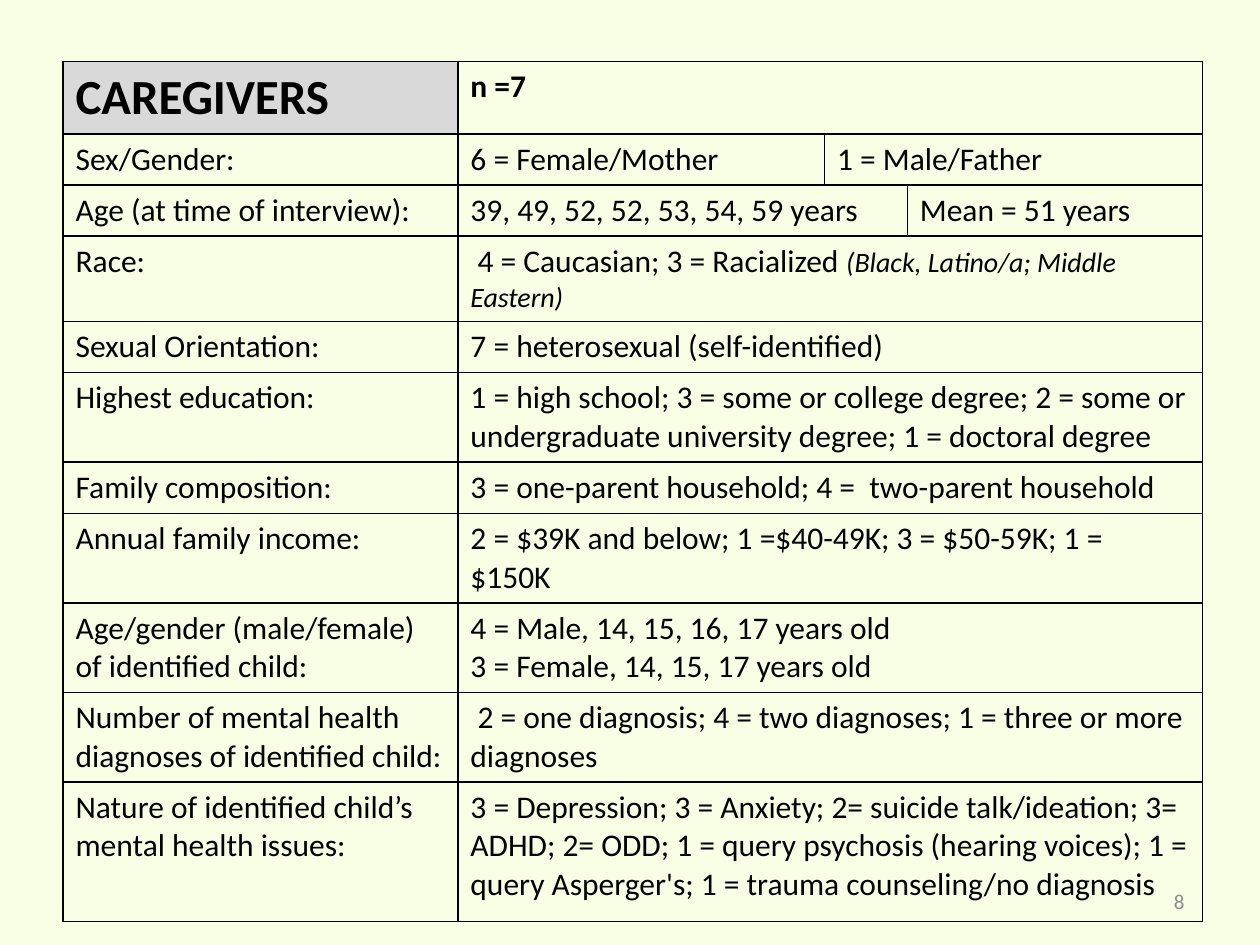
"""Build a slide with a table describing the seven caregivers interviewed."""
from dataclasses import dataclass

from lxml.etree import SubElement
from pptx import Presentation
from pptx.dml.color import RGBColor
from pptx.enum.text import MSO_ANCHOR, PP_ALIGN
from pptx.oxml.ns import qn
from pptx.util import Cm, Pt


@dataclass(frozen=True)
class Theme:
    font: str = "Calibri"
    paper: str = "F8FFE5"
    ink: str = "000000"
    heading_fill: str = "D9D9D9"
    muted: str = "8C8C8C"
    heading: int = 28
    body: int = 18
    aside: int = 16
    footer: int = 12


theme = Theme()


def write(paragraph, text, size=theme.body, color=theme.ink, bold=False, italic=False):
    run = paragraph.add_run()
    run.text = text
    run.font.name = theme.font
    run.font.size = Pt(size)
    run.font.bold = bold
    run.font.italic = italic
    run.font.color.rgb = RGBColor.from_string(color)


def outline(cell):
    properties = cell._tc.get_or_add_tcPr()
    for side in ("lnL", "lnR", "lnT", "lnB"):
        line = SubElement(properties, qn(f"a:{side}"), w=str(Pt(1)))
        ink = SubElement(line, qn("a:solidFill"))
        SubElement(ink, qn("a:srgbClr"), val=theme.ink)


facts = [
    ("CAREGIVERS", {1: "n =7"}),
    ("Sex/Gender:", {1: "6 = Female/Mother", 2: "1 = Male/Father"}),
    ("Age (at time of interview):", {1: "39, 49, 52, 52, 53, 54, 59 years", 3: "Mean = 51 years"}),
    ("Race:", {1: " 4 = Caucasian; 3 = Racialized "}),
    ("Sexual Orientation:", {1: "7 = heterosexual (self-identified)"}),
    ("Highest education:", {1: "1 = high school; 3 = some or college degree; 2 = some or "
                               "undergraduate university degree; 1 = doctoral degree"}),
    ("Family composition:", {1: "3 = one-parent household; 4 =  two-parent household"}),
    ("Annual family income:", {1: "2 = $39K and below; 1 =$40-49K; 3 = $50-59K; 1 = $150K"}),
    ("Age/gender (male/female) of identified child:",
     {1: "4 = Male, 14, 15, 16, 17 years old\n3 = Female, 14, 15, 17 years old"}),
    ("Number of mental health diagnoses of identified child:",
     {1: " 2 = one diagnosis; 4 = two diagnoses; 1 = three or more diagnoses"}),
    ("Nature of identified child’s mental health issues:",
     {1: "3 = Depression; 3 = Anxiety; 2= suicide talk/ideation; 3= ADHD; 2= ODD; "
         "1 = query psychosis (hearing voices); 1 = query Asperger's; "
         "1 = trauma counseling/no diagnosis"}),
]
column_widths = [7.96, 7.39, 1.67, 5.95]
row_heights = [1.03] * (len(facts) - 1) + [2.81]

deck = Presentation()
deck.slide_width, deck.slide_height = Cm(25.4), Cm(19.05)
slide = deck.slides.add_slide(deck.slide_layouts[6])
slide.background.fill.solid()
slide.background.fill.fore_color.rgb = RGBColor.from_string(theme.paper)

caregivers = slide.shapes.add_table(
    len(facts), len(column_widths), Cm(1.27), Cm(1.24),
    Cm(sum(column_widths)), Cm(sum(row_heights))).table
caregivers.first_row = caregivers.horz_banding = False
for column, width in zip(caregivers.columns, column_widths):
    column.width = Cm(width)
for row, height in zip(caregivers.rows, row_heights):
    row.height = Cm(height)
for cell in caregivers.iter_cells():
    outline(cell)
    cell.fill.background()

for row, (label, answers) in enumerate(facts):
    is_heading = row == 0
    label_size = theme.heading if is_heading else theme.body
    write(caregivers.cell(row, 0).text_frame.paragraphs[0], label, size=label_size, bold=is_heading)
    starts = list(answers)
    ends = [start - 1 for start in starts[1:]] + [len(column_widths) - 1]
    for start, end in zip(starts, ends):
        answer = caregivers.cell(row, start)
        if end > start:
            answer.merge(caregivers.cell(row, end))
        for index, text in enumerate(answers[start].split("\n")):
            frame = answer.text_frame
            paragraph = frame.add_paragraph() if index else frame.paragraphs[0]
            write(paragraph, text, bold=is_heading)
            if label == "Race:":
                write(paragraph, "(Black, Latino/a; Middle Eastern)", size=theme.aside, italic=True)

heading = caregivers.cell(0, 0)
heading.fill.solid()
heading.fill.fore_color.rgb = RGBColor.from_string(theme.heading_fill)

page_number = slide.shapes.add_textbox(Cm(18.21), Cm(17.65), Cm(5.92), Cm(1.02)).text_frame
page_number.word_wrap = True
page_number.vertical_anchor = MSO_ANCHOR.MIDDLE
page_number.paragraphs[0].alignment = PP_ALIGN.RIGHT
write(page_number.paragraphs[0], "8", size=theme.footer, color=theme.muted)

deck.save("out.pptx")
